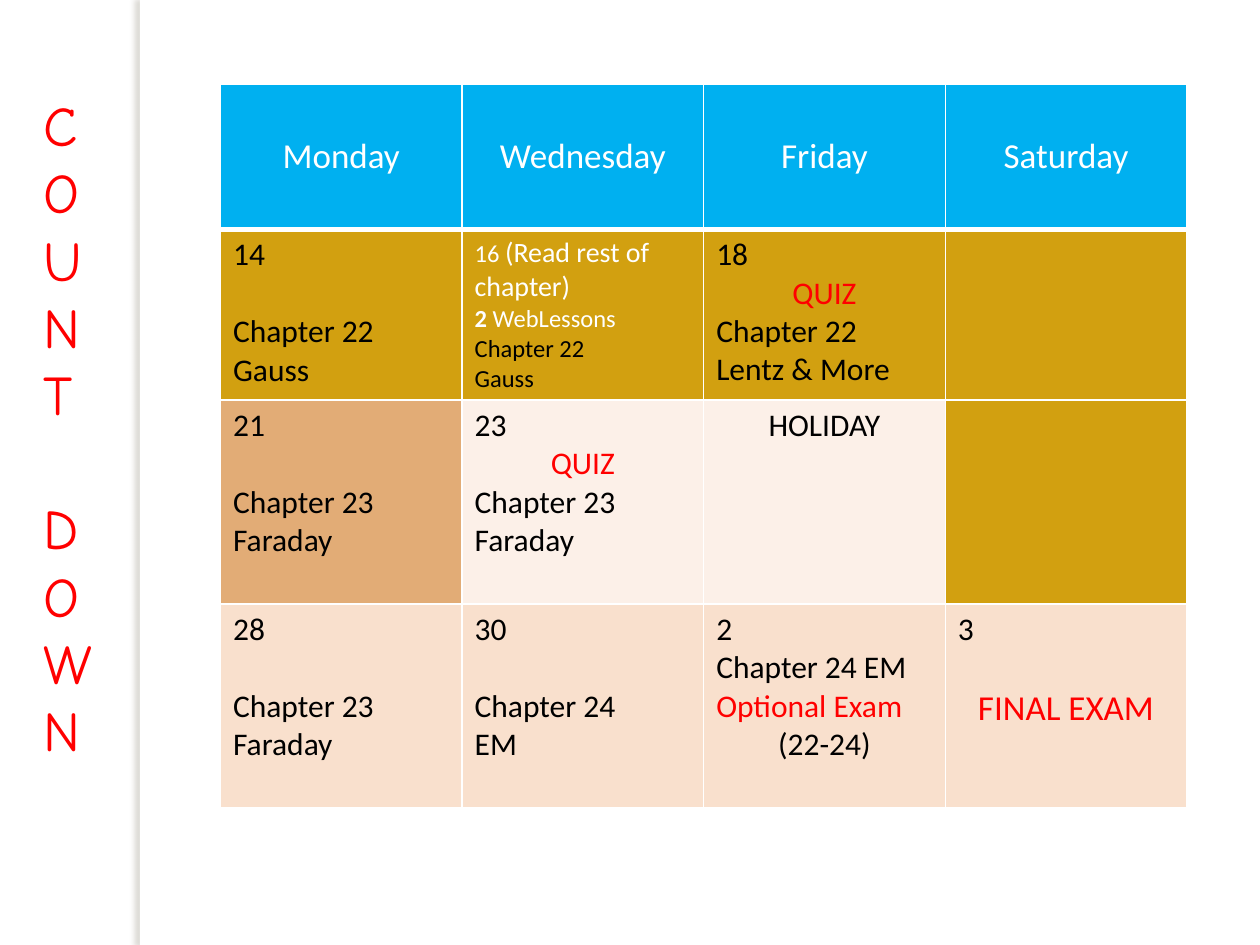
import pptx
import pptx.dml.color
import pptx.enum.shapes
import pptx.enum.text
import pptx.oxml
import pptx.oxml.ns
import pptx.util
from pptx.util import Inches

COLORS = {
    "white": "FFFFFF", "black": "000000", "red": "FF0000", "header": "00B0F0",
    "gold": "D2A010", "tan": "E2AC76", "cream": "FCF0E8", "peach": "F9E0CD",
    "shadow": "7E7763",
}
CENTER = pptx.enum.text.PP_ALIGN.CENTER
LEFT = pptx.enum.text.PP_ALIGN.LEFT
LINE_GAP = 22  # height of one 18 pt line, in points


def add_line(text_frame, index, runs, align=LEFT, space_before=0):
    """Write one paragraph; each run is text, size, colour and optionally bold and font."""
    paragraph = text_frame.add_paragraph() if index else text_frame.paragraphs[0]
    paragraph.alignment = align
    paragraph.space_before = pptx.util.Pt(space_before)
    for text, size, color, bold, font_name in runs:
        run = paragraph.add_run()
        run.text = text
        run.font.size = pptx.util.Pt(size)
        run.font.bold = bold
        run.font.name = font_name
        run.font.color.rgb = pptx.dml.color.RGBColor.from_string(COLORS[color])


def line(text, color="black", size=18, align=LEFT, gap=0):
    return [(text, size, color, False, "Calibri")], align, gap


def_quiz = line("QUIZ", "red", align=CENTER)
reading_lines = [
    ([("16 ", 14, "white", False, "Calibri"),
      ("(Read rest of chapter)", 16, "white", False, "Calibri")], LEFT, 0),
    ([("2", 14, "white", True, "Calibri"),
      (" WebLessons", 14, "white", False, "Calibri")], LEFT, 0),
    line("Chapter 22", size=14),
    line("Gauss", size=14),
]
headings = ["Monday", "Wednesday", "Friday", "Saturday"]
calendar = [
    [("header", [line(day, "white", 20, CENTER)]) for day in headings],
    [
        ("gold", [line("14"), line("Chapter 22", gap=LINE_GAP), line("Gauss")]),
        ("gold", reading_lines),
        ("gold", [line("18"), def_quiz, line("Chapter 22"), line("Lentz & More")]),
        ("gold", []),
    ],
    [
        ("tan", [line("21"), line("Chapter 23", gap=LINE_GAP), line("Faraday")]),
        ("cream", [line("23"), def_quiz, line("Chapter 23"), line("Faraday")]),
        ("cream", [line("HOLIDAY", align=CENTER)]),
        ("gold", []),
    ],
    [
        ("peach", [line("28"), line("Chapter 23", gap=LINE_GAP), line("Faraday")]),
        ("peach", [line("30"), line("Chapter 24", gap=LINE_GAP), line("EM")]),
        ("peach", [line("2"), line("Chapter 24 EM"), line("Optional Exam", "red"),
                   line("(22-24)", align=CENTER)]),
        ("peach", [line("3"), line("FINAL EXAM", "red", 20, CENTER, LINE_GAP)]),
    ],
]
row_heights = [1.15, 1.35, 1.62, 1.62]

presentation = pptx.Presentation()
presentation.slide_width = Inches(10)
presentation.slide_height = Inches(7.5)
slide = presentation.slides.add_slide(presentation.slide_layouts[6])
namespace = pptx.oxml.ns.nsdecls("a")

# Sidebar edge with a soft shadow to its left
edge = slide.shapes.add_shape(
    pptx.enum.shapes.MSO_SHAPE.RECTANGLE, Inches(1.11), 0, Inches(0.08), Inches(7.5))
edge.fill.solid()
edge.fill.fore_color.rgb = pptx.dml.color.RGBColor.from_string(COLORS["white"])
edge.line.fill.background()
edge.shadow.inherit = False
effects = edge._element.spPr.find(pptx.oxml.ns.qn("a:effectLst"))
effects.append(pptx.oxml.parse_xml(
    f'<a:outerShdw {namespace} blurRad="38100" dist="38100" dir="10800000" '
    f'algn="tl" rotWithShape="0"><a:srgbClr val="{COLORS["shadow"]}">'
    '<a:alpha val="25000"/></a:srgbClr></a:outerShdw>'))

# Calendar
table = slide.shapes.add_table(
    len(calendar), len(headings), Inches(1.75), Inches(0.67),
    Inches(7.67), Inches(sum(row_heights))).table
for row_index, (height, row) in enumerate(zip(row_heights, calendar)):
    table.rows[row_index].height = Inches(height)
    for column_index, (fill, lines) in enumerate(row):
        cell = table.cell(row_index, column_index)
        properties = cell._tc.get_or_add_tcPr()
        for side in "LRTB":
            width = 38100 if row_index == 0 and side == "B" else 12700
            properties.append(pptx.oxml.parse_xml(
                f'<a:ln{side} {namespace} w="{width}"><a:solidFill>'
                f'<a:srgbClr val="{COLORS["white"]}"/></a:solidFill></a:ln{side}>'))
        cell.fill.solid()
        cell.fill.fore_color.rgb = pptx.dml.color.RGBColor.from_string(COLORS[fill])
        if row_index == 0:
            cell.vertical_anchor = pptx.enum.text.MSO_ANCHOR.MIDDLE
        for index, (runs, align, gap) in enumerate(lines):
            add_line(cell.text_frame, index, runs, align, gap)

# Vertical title, one letter a line
title = slide.shapes.add_textbox(Inches(0.25), Inches(0.67), Inches(0.67), Inches(5.49))
title.text_frame.word_wrap = False
title.text_frame.auto_size = pptx.enum.text.MSO_AUTO_SIZE.SHAPE_TO_FIT_TEXT
for index, letter in enumerate("COUNTDOWN"):
    word_gap = 38.4 if letter == "D" else 0
    add_line(title.text_frame, index, [(letter, 32, "red", False, "Comic Neue")],
             space_before=word_gap)

presentation.save("out.pptx")
